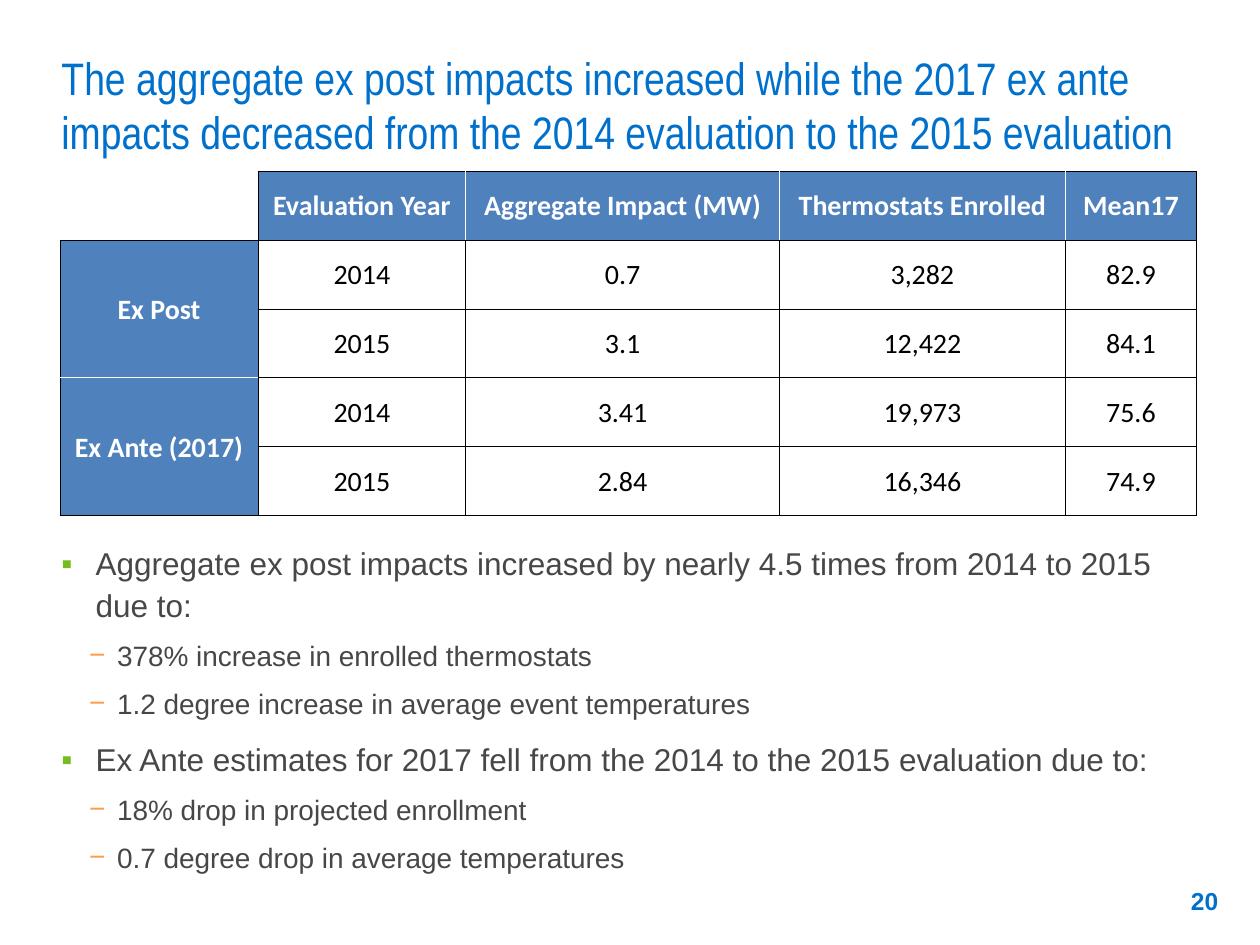
from lxml import etree
from pptx import Presentation
from pptx.dml.color import RGBColor
from pptx.enum.text import MSO_ANCHOR, PP_ALIGN
from pptx.oxml.ns import qn
from pptx.util import Cm, Pt

TOP, MIDDLE, BOTTOM = MSO_ANCHOR.TOP, MSO_ANCHOR.MIDDLE, MSO_ANCHOR.BOTTOM
LEFT, CENTER, RIGHT = PP_ALIGN.LEFT, PP_ALIGN.CENTER, PP_ALIGN.RIGHT

BLUE, GREY, GREEN, ORANGE = "0070CD", "464749", "77BC1F", "FB9E4C"
HEADER_FILL, WHITE, BLACK = "4F81BD", "FFFFFF", "000000"

TITLE = ("The aggregate ex post impacts increased while the 2017 ex ante "
         "impacts decreased from the 2014 evaluation to the 2015 evaluation")
IMPACTS = [
    ["", "Evaluation Year", "Aggregate Impact (MW)", "Thermostats Enrolled", "Mean17"],
    ["Ex Post", "2014", "0.7", "3,282", "82.9"],
    ["", "2015", "3.1", "12,422", "84.1"],
    ["Ex Ante (2017)", "2014", "3.41", "19,973", "75.6"],
    ["", "2015", "2.84", "16,346", "74.9"],
]
COLUMN_WIDTHS = [3.99, 4.19, 6.32, 5.77, 2.64]
ROW_HEIGHT = 1.39
FINDINGS = [
    (0, "Aggregate ex post impacts increased by nearly 4.5 times from 2014 to 2015 due to:"),
    (1, "378% increase in enrolled thermostats"),
    (1, "1.2 degree increase in average event temperatures"),
    (0, "Ex Ante estimates for 2017 fell from the 2014 to the 2015 evaluation due to:"),
    (1, "18% drop in projected enrollment"),
    (1, "0.7 degree drop in average temperatures"),
]
BULLET_LEVELS = [
    {"mark": "▪", "color": GREEN, "indent": 0.69, "hanging": 0.69, "size": 18, "before": 3.6},
    {"mark": "−", "color": ORANGE, "indent": 1.12, "hanging": 0.56, "size": 16, "before": 0.3},
]


def rgb(hex_color):
    return RGBColor.from_string(hex_color)


def set_all(target, values):
    for name, value in values.items():
        setattr(target, name, value)


def add_color(parent, hex_color):
    etree.SubElement(parent, qn("a:srgbClr"), val=hex_color)


def is_header(row, column):
    """True for the top row and the first column, without their shared corner."""
    return (row == 0) != (column == 0)


class SlideBuilder:
    def __init__(self, slide):
        self.slide = slide
        self.text_insets = {"margin_left": 0, "margin_top": Cm(0.13),
                            "margin_right": Cm(0.25), "margin_bottom": Cm(0.13)}
        self.cell_format = {"margin_left": Cm(0.03), "margin_top": Cm(0.03),
                            "margin_right": Cm(0.03), "margin_bottom": 0,
                            "vertical_anchor": MIDDLE}

    def styled_run(self, paragraph, text, font, size, color, bold=False):
        run = paragraph.add_run()
        run.text = text
        set_all(run.font, {"name": font, "size": Pt(size), "bold": bold})
        run.font.color.rgb = rgb(color)

    def frame(self, left, top, width, height, **format_values):
        box = self.slide.shapes.add_textbox(Cm(left), Cm(top), Cm(width), Cm(height))
        set_all(box.text_frame, {"word_wrap": True, **self.text_insets, **format_values})
        return box.text_frame

    def text(self, place, text, font, size, color, align=LEFT, bold=False, **format_values):
        paragraph = self.frame(*place, **format_values).paragraphs[0]
        paragraph.alignment = align
        self.styled_run(paragraph, text, font, size, color, bold)

    def bullets(self, place, items):
        frame = self.frame(*place, vertical_anchor=TOP)
        for index, (level, text) in enumerate(items):
            look = BULLET_LEVELS[level]
            paragraph = frame.add_paragraph() if index else frame.paragraphs[0]
            properties = paragraph._p.get_or_add_pPr()
            properties.set("marL", str(Cm(look["indent"])))
            properties.set("indent", str(-Cm(look["hanging"])))
            add_color(etree.SubElement(properties, qn("a:buClr")), look["color"])
            etree.SubElement(properties, qn("a:buFont"), typeface="Arial")
            etree.SubElement(properties, qn("a:buChar"), char=look["mark"])
            set_all(paragraph, {"level": level, "line_spacing": 1.1, "space_after": Pt(6)})
            if index:
                paragraph.space_before = Pt(look["before"])
            self.styled_run(paragraph, text, "Arial", look["size"], GREY)

    def borders(self, cell, row, column, row_count, column_count):
        """Draw white lines between header cells and black ones elsewhere."""
        neighbours = {"L": (row, column - 1), "R": (row, column + 1),
                      "T": (row - 1, column), "B": (row + cell.span_height, column)}
        properties = cell._tc.get_or_add_tcPr()
        for side, (near_row, near_column) in neighbours.items():
            inside = 0 <= near_row < row_count and 0 <= near_column < column_count
            if not inside and row == column == 0:
                continue
            between_headers = (inside and is_header(row, column)
                               and is_header(near_row, near_column))
            line = etree.SubElement(properties, qn(f"a:ln{side}"), w=str(Pt(0.5)))
            add_color(etree.SubElement(line, qn("a:solidFill")),
                      WHITE if between_headers else BLACK)

    def table(self, left, top, rows, widths, row_height):
        table = self.slide.shapes.add_table(
            len(rows), len(widths), Cm(left), Cm(top),
            Cm(sum(widths)), Cm(row_height * len(rows))).table
        set_all(table, {"first_row": False, "horz_banding": False})
        for column, width in zip(table.columns, widths):
            column.width = Cm(width)
        for row in table.rows:
            row.height = Cm(row_height)
        for first in range(1, len(rows), 2):
            table.cell(first, 0).merge(table.cell(first + 1, 0))
        for r, values in enumerate(rows):
            for c, value in enumerate(values):
                cell, header = table.cell(r, c), is_header(r, c)
                set_all(cell, self.cell_format)
                self.borders(cell, r, c, len(rows), len(widths))
                if header:
                    cell.fill.solid()
                    cell.fill.fore_color.rgb = rgb(HEADER_FILL)
                else:
                    cell.fill.background()
                if value:
                    paragraph = cell.text_frame.paragraphs[0]
                    paragraph.alignment = CENTER
                    self.styled_run(paragraph, value, "Calibri", 16,
                                    WHITE if header else BLACK, header)


def main():
    presentation = Presentation()
    set_all(presentation, {"slide_width": Cm(25.4), "slide_height": Cm(19.05)})
    builder = SlideBuilder(presentation.slides.add_slide(presentation.slide_layouts[6]))
    builder.bullets((1.24, 10.77, 22.89, 5.69), FINDINGS)
    builder.text((1.24, 1.45, 22.89, 1.88), TITLE, "Arial Narrow", 26, BLUE,
                 vertical_anchor=BOTTOM)
    builder.text((23.14, 17.65, 1.65, 1.02), "20", "Arial", 14, BLUE, RIGHT, True,
                 vertical_anchor=MIDDLE, margin_left=Cm(0.23), margin_right=Cm(0.23))
    builder.table(1.21, 3.45, IMPACTS, COLUMN_WIDTHS, ROW_HEIGHT)
    presentation.save("out.pptx")


if __name__ == "__main__":
    main()
